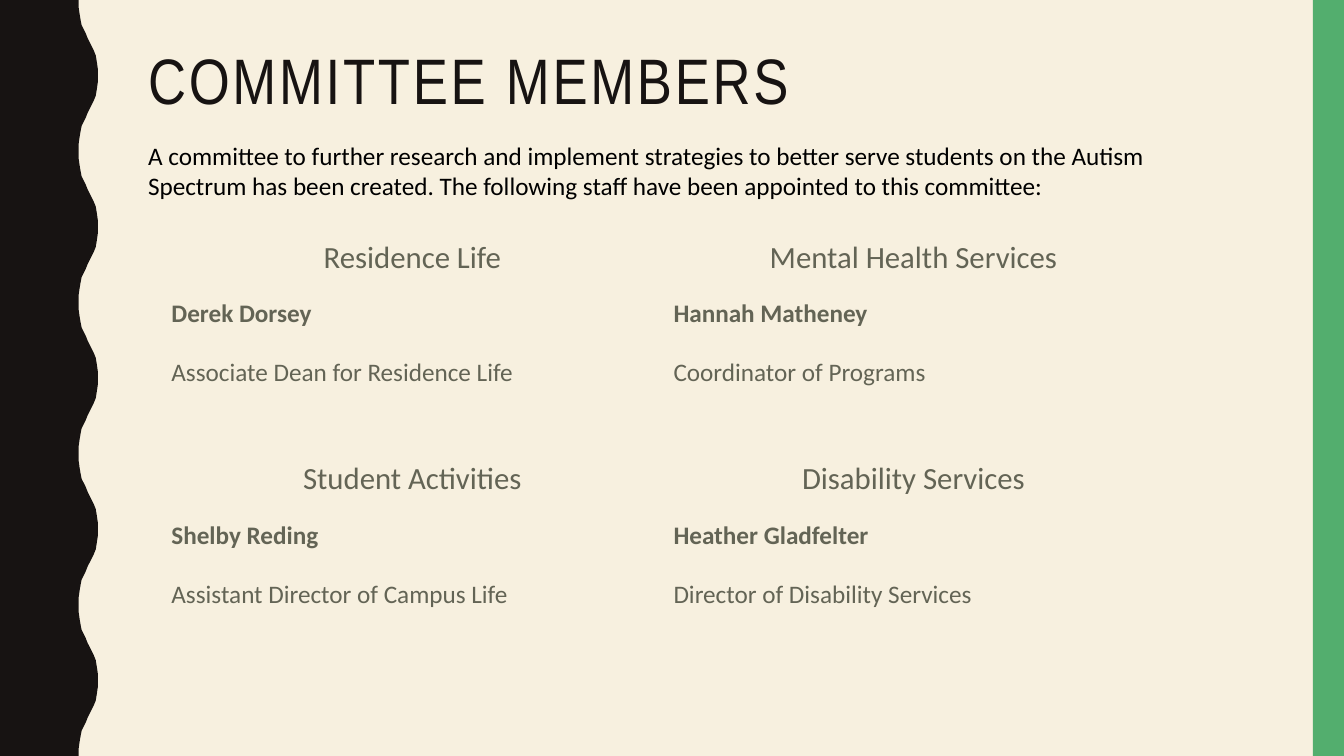
from pptx import Presentation
from pptx.dml.color import RGBColor
from pptx.enum import shapes, text
from pptx.oxml import ns
from pptx.util import Inches, Pt
from lxml import etree

HUES = {"paper": "F7F0DF", "ink": "171312", "green": "53AE6E",
        "body": "000000", "grey": "636455"}
# Half of one wave: (x, y) from trough to crest
HALF = [(0.78, 0), (0.78, 0.07), (0.79, 0.14), (0.8, 0.2), (0.81, 0.25),
        (0.83, 0.29), (0.85, 0.33), (0.87, 0.38), (0.89, 0.42), (0.91, 0.46),
        (0.93, 0.5), (0.95, 0.55), (0.96, 0.61), (0.97, 0.68), (0.97, 0.75)]
WAVE = 1.5
INTRO = ("A committee to further research and implement strategies to better "
         "serve students on the Autism Spectrum has been created. The following "
         "staff have been appointed to this committee:")
# Pairs of members: office, name, post
STAFF = [
    [("Residence Life", "Derek Dorsey", "Associate Dean for Residence Life"),
     ("Mental Health Services", "Hannah Matheney", "Coordinator of Programs")],
    [("Student Activities", "Shelby Reding", "Assistant Director of Campus Life"),
     ("Disability Services", "Heather Gladfelter", "Director of Disability Services")],
]
# Row styles within a pair: height, size, bold, alignment
ROWS = [(0.59, 22, False, text.PP_ALIGN.CENTER),
        (0.59, 18, True, text.PP_ALIGN.LEFT),
        (1.02, 18, False, text.PP_ALIGN.LEFT)]


def paint(fill, hue):
    fill.solid()
    fill.fore_color.rgb = RGBColor.from_string(HUES[hue])


def finish(shape, hue):
    paint(shape.fill, hue)
    shape.line.fill.background()
    shape.shadow.inherit = False


def write(para, words, size, hue, font="Calibri", bold=False):
    run = para.add_run()
    run.text = words
    run.font.size = Pt(size)
    run.font.name = font
    run.font.bold = bold
    run.font.color.rgb = RGBColor.from_string(HUES[hue])
    return run


def add_edge(slide, left, top, height):
    """Dark band with a wavy right side."""
    waves = round(height / WAVE)
    cycle = HALF + [(x, WAVE - y) for x, y in HALF[-2:0:-1]]
    points = [(left + x, top + n * WAVE + y)
              for n in range(waves) for x, y in cycle]
    points += [(left + HALF[0][0], top + height), (left, top + height)]
    pen = slide.shapes.build_freeform(Inches(left), Inches(top), scale=1.0)
    pen.add_line_segments([(Inches(x), Inches(y)) for x, y in points], close=True)
    finish(pen.convert_to_shape(), "ink")


def add_bar(slide, *box):
    bar = slide.shapes.add_shape(shapes.MSO_SHAPE.RECTANGLE, *map(Inches, box))
    finish(bar, "green")


def add_frame(slide, *box):
    frame = slide.shapes.add_textbox(*map(Inches, box)).text_frame
    frame.word_wrap = True
    return frame


def add_title(slide, *box):
    frame = add_frame(slide, *box)
    frame.vertical_anchor = text.MSO_ANCHOR.MIDDLE
    para = frame.paragraphs[0]
    para.line_spacing = 0.9
    run = write(para, "COMMITTEE MEMBERS", 45.9, "ink", "Arial Narrow")
    run.font._element.set("spc", "200")


def add_intro(slide, *box):
    write(add_frame(slide, *box).paragraphs[0], INTRO, 18, "body")


def clear(cell):
    """Remove the borders and fill of a cell."""
    props = cell._tc.get_or_add_tcPr()
    for side in ("lnL", "lnR", "lnT", "lnB"):
        line = etree.SubElement(props, ns.qn("a:" + side))
        etree.SubElement(line, ns.qn("a:noFill"))
    cell.fill.background()


def add_staff(slide, *box):
    table = slide.shapes.add_table(
        len(STAFF) * len(ROWS), 2, *map(Inches, box)).table
    table.first_row = table.horz_banding = False
    for col, width in zip(table.columns, (4.98, 4.96)):
        col.width = Inches(width)
    for p, pair in enumerate(STAFF):
        for r, (height, size, bold, align) in enumerate(ROWS):
            row = p * len(ROWS) + r
            table.rows[row].height = Inches(height)
            for c, member in enumerate(pair):
                cell = table.cell(row, c)
                clear(cell)
                para = cell.text_frame.paragraphs[0]
                para.alignment = align
                write(para, member[r], size, "grey", bold=bold)


def main():
    deck = Presentation()
    deck.slide_width, deck.slide_height = Inches(13.33), Inches(7.5)
    slide = deck.slides.add_slide(deck.slide_layouts[6])
    paint(slide.background.fill, "paper")
    # Side decorations
    add_edge(slide, 0, 0, 7.5)
    add_bar(slide, 13.02, 0, 0.31, 7.5)
    # Heading and members
    add_title(slide, 1.37, 0.42, 11.13, 0.83)
    add_intro(slide, 1.37, 1.34, 10.17, 0.71)
    add_staff(slide, 1.6, 2.32, 9.94, 4.4)
    deck.save("out.pptx")


if __name__ == "__main__":
    main()
